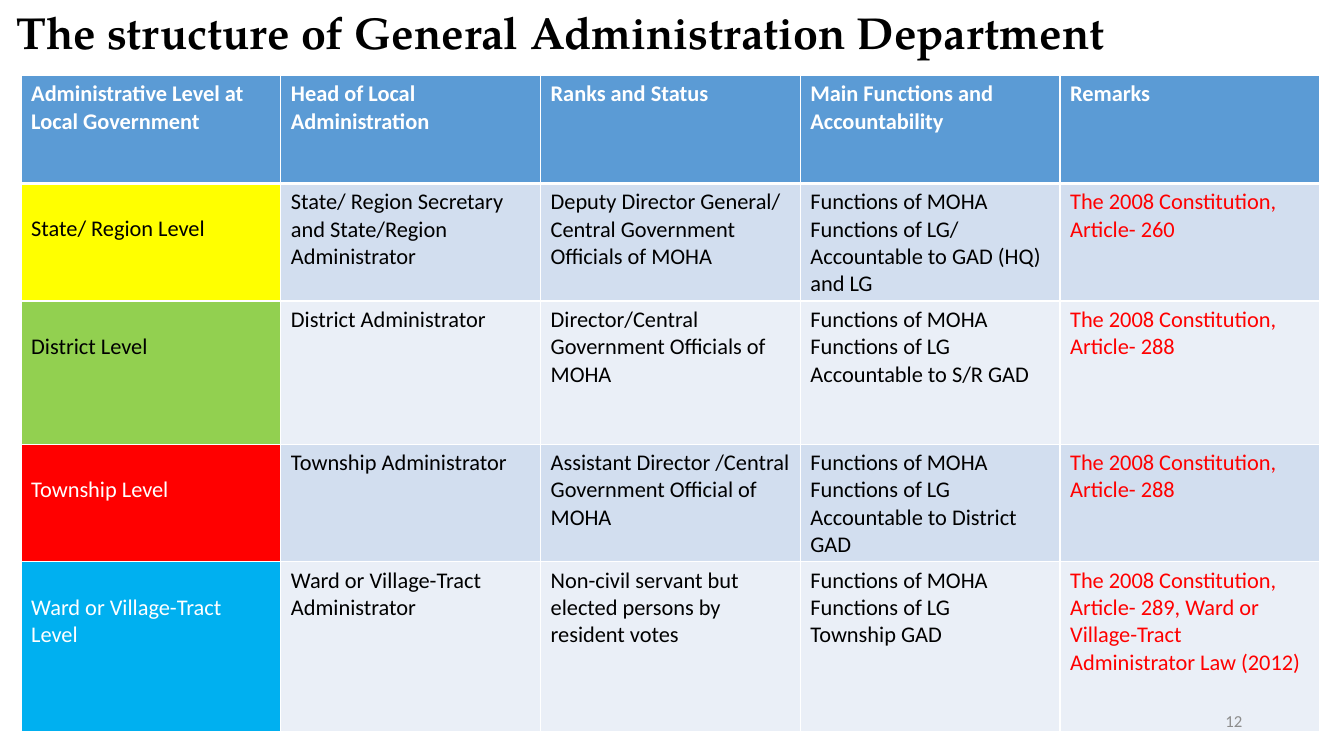
"""Build the slide on the structure of the General Administration Department."""
from lxml import etree
from pptx import Presentation
from pptx import util as u
from pptx.dml.color import RGBColor
from pptx.enum import text
from pptx.oxml.ns import qn


def style(p, size, color, bold=False, font="Calibri"):
    for r in p.runs:
        r.font.size = u.Pt(size)
        r.font.name = font
        r.font.bold = bold
        r.font.color.rgb = RGBColor.from_string(color)


def add_borders(cell, bottom):
    tc_pr = cell._tc.get_or_add_tcPr()
    for i, (side, width) in enumerate([("L", 1), ("R", 1), ("T", 1), ("B", bottom)]):
        ln = etree.Element(qn(f"a:ln{side}"), w=str(u.Pt(width)))
        fill = etree.SubElement(ln, qn("a:solidFill"))
        etree.SubElement(fill, qn("a:srgbClr"), val="FFFFFF")
        tc_pr.insert(i, ln)


header = ["Administrative Level at Local Government", "Head of Local Administration",
          "Ranks and Status", "Main Functions and Accountability", "Remarks"]
levels = [
    ["State/ Region Level", "State/ Region Secretary and State/Region Administrator",
     "Deputy Director General/ Central Government Officials of MOHA",
     "Functions of MOHA\nFunctions of LG/ Accountable to GAD (HQ) and LG",
     "The 2008 Constitution, Article- 260"],
    ["District Level", "District Administrator",
     "Director/Central Government Officials of MOHA",
     "Functions of MOHA\nFunctions of LG\nAccountable to S/R GAD",
     "The 2008 Constitution, Article- 288"],
    ["Township Level", "Township Administrator",
     "Assistant Director /Central Government Official of MOHA",
     "Functions of MOHA\nFunctions of LG Accountable to District GAD",
     "The 2008 Constitution, Article- 288"],
    ["Ward or Village-Tract Level", "Ward or Village-Tract Administrator",
     "Non-civil servant but elected persons by resident votes",
     "Functions of MOHA\nFunctions of LG\nTownship GAD",
     "The 2008 Constitution, Article- 289, Ward or Village-Tract Administrator Law (2012)"],
]
level_colors = [("FFFF00", "000000"), ("92D050", "000000"),
                ("FF0000", "FFFFFF"), ("00B0F0", "FFFFFF")]
bands = ["D2DEEF", "EAEFF7"]
heights = [1.07, 1.16, 1.42, 1.16, 1.69]

prs = Presentation()
prs.slide_width, prs.slide_height = u.Inches(13.33), u.Inches(7.5)
s = prs.slides.add_slide(prs.slide_layouts[5])

title = s.shapes.title
title.left, title.top = u.Inches(0.06), u.Inches(0)
title.width, title.height = u.Inches(11.54), u.Inches(0.64)
tf = title.text_frame
tf.text = "The structure of General Administration Department"
tf.vertical_anchor = text.MSO_ANCHOR.TOP
tf.auto_size = text.MSO_AUTO_SIZE.SHAPE_TO_FIT_TEXT
tf.paragraphs[0].alignment = text.PP_ALIGN.LEFT
style(tf.paragraphs[0], 32, "000000", True, "TeX Gyre Pagella")

table = s.shapes.add_table(len(heights), len(header), u.Inches(0.21), u.Inches(0.75),
                           u.Inches(12.88), u.Inches(sum(heights))).table
for row, height in zip(table.rows, heights):
    row.height = u.Inches(height)

for i, row in enumerate([header] + levels):
    for j, value in enumerate(row):
        cell = table.cell(i, j)
        if i == 0:
            fill, color = "5B9BD5", "FFFFFF"
        elif j == 0:
            fill, color = level_colors[i - 1]
            cell.margin_top = u.Inches(0.32)
        else:
            fill = bands[(i - 1) % 2]
            color = "FF0000" if j == len(header) - 1 else "000000"
        cell.text_frame.text = value
        for p in cell.text_frame.paragraphs:
            style(p, 16, color, i == 0)
        cell.fill.solid()
        cell.fill.fore_color.rgb = RGBColor.from_string(fill)
        add_borders(cell, 3 if i == 0 else 1)
        if i == 1:
            cell._tc.tcPr.find(qn("a:lnT")).set("w", str(u.Pt(3)))

number = s.shapes.add_textbox(u.Inches(9.42), u.Inches(6.95), u.Inches(3), u.Inches(0.4))
tf = number.text_frame
tf.word_wrap = True
tf.text = "12"
tf.vertical_anchor = text.MSO_ANCHOR.MIDDLE
tf.paragraphs[0].alignment = text.PP_ALIGN.RIGHT
style(tf.paragraphs[0], 12, "8C8C8C")

prs.save("out.pptx")
